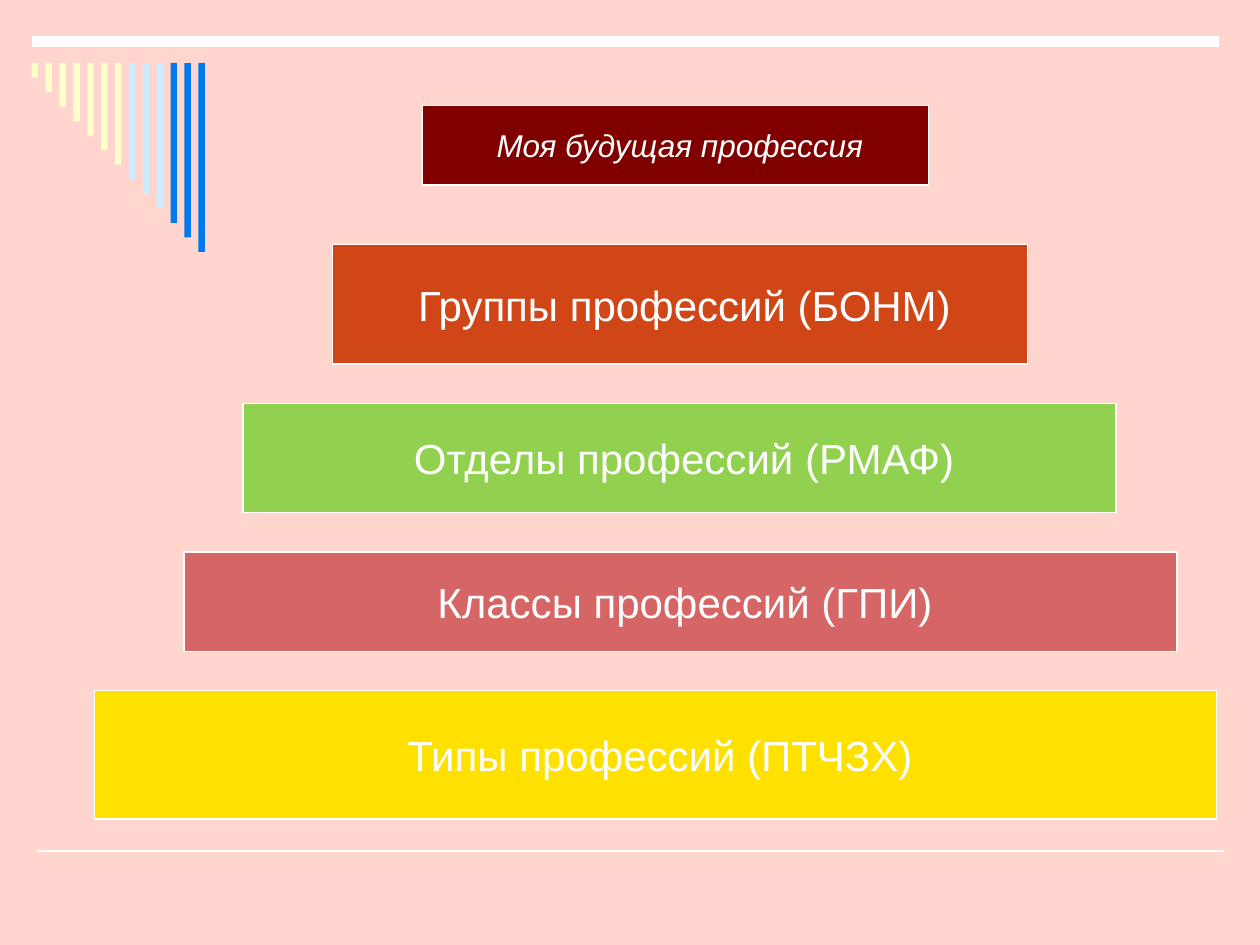
from dataclasses import dataclass

from lxml import etree
from pptx import Presentation
from pptx import util as u
from pptx.dml.color import RGBColor
from pptx.enum import shapes, text
from pptx.oxml.ns import qn


@dataclass(frozen=True)
class Theme:
    font: str = "Arial"
    title_size: int = 18
    step_size: int = 24
    background: str = "FFD5CD"
    light: str = "FFFFFF"
    title_fill: str = "800000"
    cream: str = "FFFFCC"
    pale_blue: str = "CCECFF"
    blue: str = "0078F0"
    border: float = 0.75


# Text, fill, and left, top, width, height in cm
STEPS = [
    ("Группы профессий (БОНМ)", "D04617", (6.71, 4.93, 14.0, 2.41)),
    ("Отделы профессий (РМАФ)", "92D04F", (4.9, 8.13, 17.6, 2.21)),
    ("Классы профессий (ГПИ)", "D66565", (3.71, 11.13, 20.02, 2.01)),
    ("Типы профессий (ПТЧЗХ)", "FFE100", (1.91, 13.92, 22.61, 2.59)),
]


def apply(target, values):
    for name, value in values.items():
        setattr(target, name, value)


def paint(fill, color):
    fill.solid()
    fill.fore_color.rgb = RGBColor.from_string(color)


class SlideBuilder:
    def __init__(self, slide, theme):
        self.slide = slide
        self.theme = theme
        paint(slide.background.fill, theme.background)

    def rule(self, left, top, width, weight):
        line = self.slide.shapes.add_connector(
            shapes.MSO_CONNECTOR.STRAIGHT,
            u.Cm(left), u.Cm(top), u.Cm(left + width), u.Cm(top))
        line.line.width = u.Pt(weight)
        paint(line.line.fill, self.theme.light)
        etree.SubElement(line._element.spPr, qn("a:effectLst"))

    def block(self, box, color):
        block = self.slide.shapes.add_shape(
            shapes.MSO_SHAPE.RECTANGLE, *map(u.Cm, box))
        block.shadow.inherit = False
        paint(block.fill, color)
        block.line.fill.background()
        return block

    def fringe(self, left, top, pitch, width, full_height, colors):
        """Hang a row of bars whose heights grow evenly to full_height."""
        for i, color in enumerate(colors):
            height = full_height * (i + 1) / len(colors)
            self.block((left + i * pitch, top, width, height), color)

    def label(self, shape, wording, size, italic=False):
        """Give a panel its border and its centred wording."""
        paint(shape.line.fill, self.theme.light)
        shape.line.width = u.Pt(self.theme.border)
        frame = shape.text_frame
        frame.text = wording
        apply(frame, {
            "word_wrap": True,
            "auto_size": text.MSO_AUTO_SIZE.NONE,
            "vertical_anchor": text.MSO_ANCHOR.MIDDLE,
            "margin_left": u.Cm(0.43),
            "margin_right": u.Cm(0.25),
        })
        paragraph = frame.paragraphs[0]
        paragraph.alignment = text.PP_ALIGN.CENTER
        font = paragraph.runs[0].font
        apply(font, {"name": self.theme.font, "size": u.Pt(size),
                     "italic": italic})
        font.color.rgb = RGBColor.from_string(self.theme.light)

    def title(self, wording, box):
        title = self.slide.shapes.title
        apply(title, dict(zip(("left", "top", "width", "height"),
                              map(u.Cm, box))))
        paint(title.fill, self.theme.title_fill)
        self.label(title, wording, self.theme.title_size, italic=True)

    def step(self, wording, color, box):
        self.label(self.block(box, color), wording, self.theme.step_size)


def main():
    theme = Theme()
    deck = Presentation()
    apply(deck, {"slide_width": u.Cm(25.4), "slide_height": u.Cm(19.05)})
    title_only = deck.slide_layouts[5]
    builder = SlideBuilder(deck.slides.add_slide(title_only), theme)

    builder.rule(0.74, 17.15, 23.93, weight=1)
    builder.rule(0.64, 0.84, 23.93, weight=6)
    bar_colors = [theme.cream] * 7 + [theme.pale_blue] * 3 + [theme.blue] * 3
    builder.fringe(0.64, 1.27, 0.28, 0.13, 3.81, bar_colors)

    builder.title("Моя будущая профессия", (8.51, 2.13, 10.21, 1.6))
    for wording, color, box in STEPS:
        builder.step(wording, color, box)

    deck.save("out.pptx")


if __name__ == "__main__":
    main()
